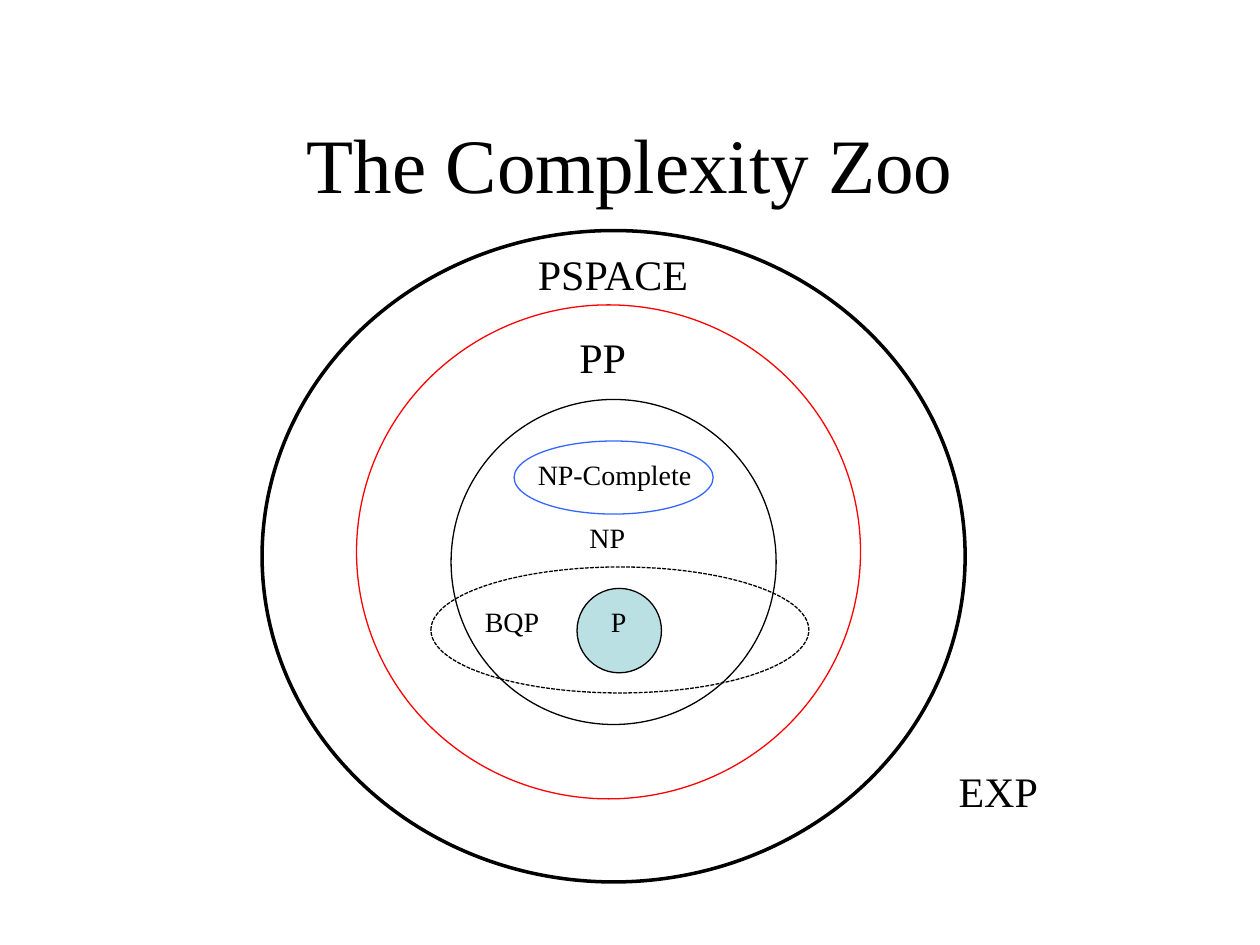
from dataclasses import dataclass

from pptx import Presentation
from pptx.dml.color import RGBColor
from pptx.enum.dml import MSO_LINE_DASH_STYLE as Dash
from pptx.enum.shapes import MSO_SHAPE as Shape
from pptx.enum.text import MSO_ANCHOR as Anchor, MSO_AUTO_SIZE as AutoSize, PP_ALIGN as Align
from pptx.util import Inches, Pt


@dataclass(frozen=True)
class Theme:
    font: str = "Times New Roman"
    ink: str = "000000"
    red: str = "FF0000"
    blue: str = "3366FF"
    teal: str = "BBE0E3"
    title: int = 44
    large: int = 24
    small: int = 16
    thick: float = 2
    thin: float = 0.75


THEME = Theme()

SETS = [
    ((0, 0, 5.58, 5.17), THEME.ink, THEME.thick, None, None),
    ((0.75, 0.59, 4, 3.92), THEME.red, THEME.thin, None, None),
    ((1.5, 1.34, 2.58, 2.58), THEME.ink, THEME.thin, None, None),
    ((2, 1.67, 1.58, 0.58), THEME.blue, THEME.thin, None, None),
    ((2.5, 2.84, 0.67, 0.67), THEME.ink, THEME.thin, THEME.teal, None),
    ((1.34, 2.67, 3, 1), THEME.ink, THEME.thin, None, Dash.SQUARE_DOT),
]

LABELS = [
    ("PSPACE", (2.09, 0.09, 1.41, 0.5), THEME.large),
    ("PP", (2.42, 0.75, 0.69, 0.5), THEME.large),
    ("NP-Complete", (2.09, 1.75, 1.44, 0.37), THEME.small),
    ("P", (2.67, 2.92, 0.33, 0.37), THEME.small),
    ("NP", (2.5, 2.25, 0.5, 0.37), THEME.small),
    ("BQP", (1.67, 2.92, 0.64, 0.37), THEME.small),
    ("EXP", (5.43, 4.2, 0.84, 0.5), THEME.large),
]


def apply_format(target, values):
    for name, value in values.items():
        setattr(target, name, value)


def place(box, part):
    left, top = box[:2]
    x, y, width, height = part
    return [Inches(length) for length in (left + x, top + y, width, height)]


def write(frame, text, size, align):
    para = frame.paragraphs[0]
    para.alignment = align
    span = para.add_run()
    span.text = text
    apply_format(span.font, {"name": THEME.font, "size": Pt(size), "bold": False})
    span.font.color.rgb = RGBColor.from_string(THEME.ink)


def add_title(page, box, text):
    title = page.shapes.title
    names = ("left", "top", "width", "height")
    apply_format(title, dict(zip(names, map(Inches, box))))
    apply_format(title.text_frame, {"vertical_anchor": Anchor.MIDDLE, "word_wrap": True})
    write(title.text_frame, text, THEME.title, Align.CENTER)


def add_set(page, box, part, color, weight, fill, dash):
    oval = page.shapes.add_shape(Shape.OVAL, *place(box, part))
    oval.shadow.inherit = False
    if fill:
        oval.fill.solid()
        oval.fill.fore_color.rgb = RGBColor.from_string(fill)
    else:
        oval.fill.background()
    oval.line.color.rgb = RGBColor.from_string(color)
    apply_format(oval.line, {"width": Pt(weight), "dash_style": dash})


def add_label(page, box, text, part, size):
    frame = page.shapes.add_textbox(*place(box, part)).text_frame
    apply_format(frame, {"word_wrap": False, "auto_size": AutoSize.SHAPE_TO_FIT_TEXT})
    write(frame, text, size, Align.LEFT)


def add_zoo(page, box):
    for oval in SETS:
        add_set(page, box, *oval)
    for label in LABELS:
        add_label(page, box, *label)


def main():
    deck = Presentation()
    apply_format(deck, {"slide_width": Inches(10), "slide_height": Inches(7.5)})
    page = deck.slides.add_slide(deck.slide_layouts.get_by_name("Title Only"))
    add_title(page, (0.75, 0.67, 8.5, 1.25), "The Complexity Zoo")
    add_zoo(page, (2.08, 1.83, 5.58, 5.17))
    deck.save("out.pptx")


if __name__ == "__main__":
    main()
